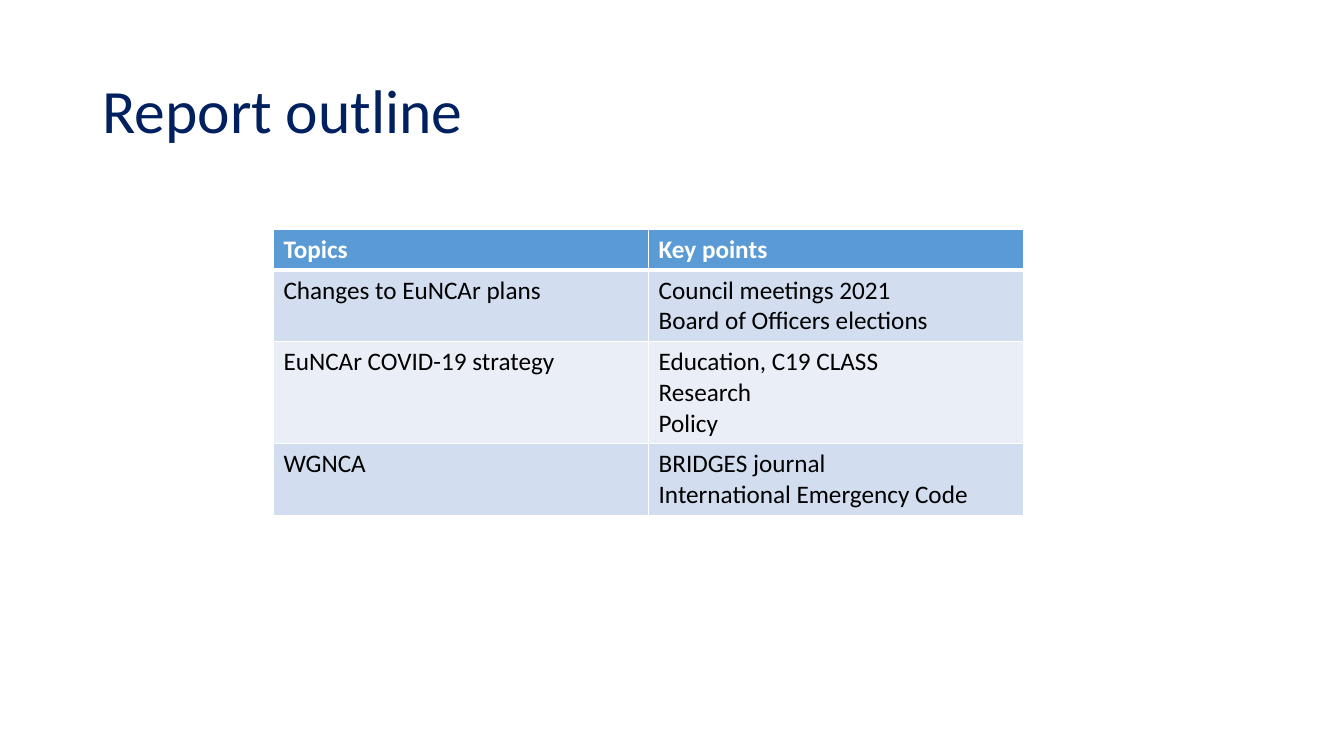
from lxml.etree import SubElement
from pptx import Presentation
from pptx.dml.color import RGBColor
from pptx.enum.text import MSO_ANCHOR
from pptx.oxml.ns import qn
from pptx.util import Pt

TITLE = "Report outline"
HEADER = ("Topics", "Key points")
TOPICS = [
    ("Changes to EuNCAr plans", ["Council meetings 2021", "Board of Officers elections"]),
    ("EuNCAr COVID-19 strategy", ["Education, C19 CLASS", "Research", "Policy"]),
    ("WGNCA", ["BRIDGES journal", "International Emergency Code"]),
]

THEME = {
    "title": {"name": "Calibri", "size": Pt(44), "bold": False, "color": "002060"},
    "header": {"name": "Calibri", "size": Pt(18), "bold": True, "color": "FFFFFF"},
    "body": {"name": "Calibri", "size": Pt(18), "bold": False, "color": "000000"},
    "header_fill": "5B9BD5",
    "band_fills": ("D2DEEF", "EAEFF7"),
    "border": "FFFFFF",
}

SLIDE_SIZE = (960, 540)
TITLE_BOX = (66, 28.8, 828, 104.4)
TABLE_LEFT, TABLE_TOP = 195.3, 163.7
COLUMN_WIDTH = 268
LINE_HEIGHT, CELL_PADDING = 21.96, 7.2
THIN, THICK = 1, 3


def write_lines(text_frame, lines, style):
    text_frame.text = "\n".join(lines)
    for paragraph in text_frame.paragraphs:
        font = paragraph.runs[0].font
        for name, value in style.items():
            if name == "color":
                font.color.rgb = RGBColor.from_string(value)
            else:
                setattr(font, name, value)


def add_borders(cell, widths):
    """Draw the cell's left, right, top and bottom lines, widths in points."""
    properties = cell._tc.get_or_add_tcPr()
    for side, width in zip("LRTB", widths):
        line = SubElement(properties, qn(f"a:ln{side}"), w=str(Pt(width)))
        fill = SubElement(line, qn("a:solidFill"))
        SubElement(fill, qn("a:srgbClr"), val=THEME["border"])


def add_title(slide):
    frame = slide.shapes.add_textbox(*map(Pt, TITLE_BOX)).text_frame
    frame.word_wrap = True
    frame.vertical_anchor = MSO_ANCHOR.MIDDLE
    write_lines(frame, [TITLE], THEME["title"])
    frame.paragraphs[0].line_spacing = 0.9


def add_topics_table(slide):
    rows = [[[label] for label in HEADER]]
    rows += [[[topic], points] for topic, points in TOPICS]
    heights = [max(map(len, row)) * LINE_HEIGHT + CELL_PADDING for row in rows]
    table = slide.shapes.add_table(
        len(rows), len(HEADER), Pt(TABLE_LEFT), Pt(TABLE_TOP),
        Pt(COLUMN_WIDTH * len(HEADER)), Pt(sum(heights)),
    ).table
    table.horz_banding = False
    for column in table.columns:
        column.width = Pt(COLUMN_WIDTH)

    for index, (row, height) in enumerate(zip(rows, heights)):
        table.rows[index].height = Pt(height)
        is_header = index == 0
        style = THEME["header" if is_header else "body"]
        fill = THEME["header_fill"] if is_header else THEME["band_fills"][(index - 1) % 2]
        top = THICK if index == 1 else THIN
        bottom = THICK if is_header else THIN
        for cell, lines in zip(table.rows[index].cells, row):
            write_lines(cell.text_frame, lines, style)
            add_borders(cell, (THIN, THIN, top, bottom))
            cell.fill.solid()
            cell.fill.fore_color.rgb = RGBColor.from_string(fill)


def main():
    presentation = Presentation()
    presentation.slide_width, presentation.slide_height = map(Pt, SLIDE_SIZE)
    slide = presentation.slides.add_slide(presentation.slide_layouts[6])
    add_title(slide)
    add_topics_table(slide)
    presentation.save("out.pptx")


if __name__ == "__main__":
    main()
